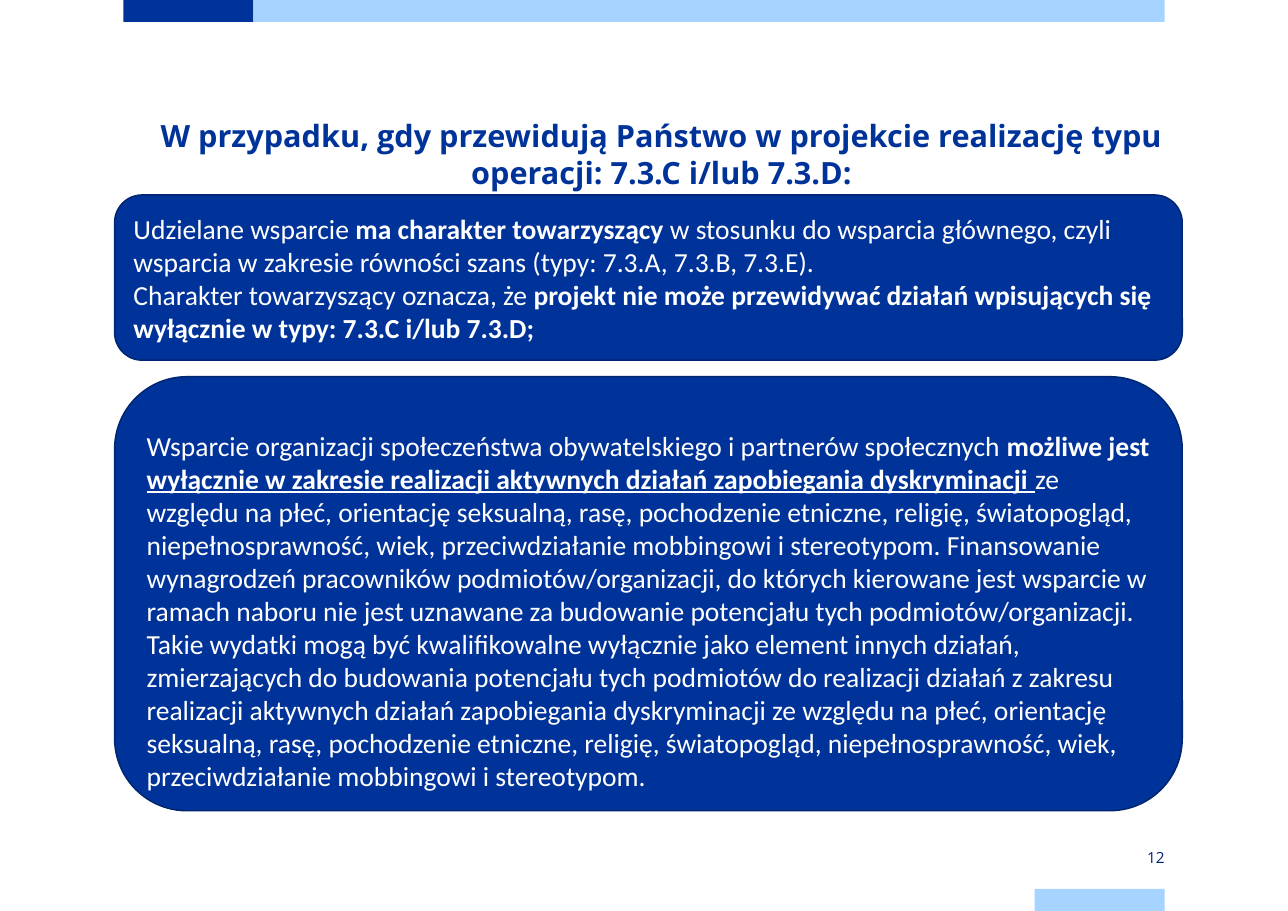
from pptx import Presentation
from pptx import util as u
from pptx.dml.color import RGBColor
from pptx.enum import shapes, text

PX = 9144  # 100 px to the inch
NAVY = RGBColor(0x00, 0x33, 0x99)
DARK_NAVY = RGBColor(0x00, 0x26, 0x71)
NUMBER_BLUE = RGBColor(0x00, 0x20, 0x73)
SKY = RGBColor(0xA6, 0xD3, 0xFF)
WHITE = RGBColor(0xFF, 0xFF, 0xFF)

PLAIN, BOLD, UNDERLINED = "plain", "bold", "underlined"

TITLE = "W przypadku, gdy przewidują Państwo w projekcie realizację typu operacji: 7.3.C i/lub 7.3.D:"
ACCOMPANYING_SUPPORT = [
    [("Udzielane wsparcie ", PLAIN),
     ("ma charakter towarzyszący ", BOLD),
     ("w stosunku do wsparcia głównego, czyli wsparcia w zakresie równości szans "
      "(typy: 7.3.A, 7.3.B, 7.3.E).", PLAIN)],
    [("Charakter towarzyszący oznacza, że ", PLAIN),
     ("projekt nie może przewidywać działań wpisujących się wyłącznie w typy: "
      "7.3.C i/lub 7.3.D;", BOLD)],
]
ORGANISATION_SUPPORT = [
    [("Wsparcie organizacji społeczeństwa obywatelskiego i partnerów społecznych ", PLAIN),
     ("możliwe jest ", BOLD),
     ("wyłącznie w zakresie realizacji aktywnych działań zapobiegania dyskryminacji ", UNDERLINED),
     ("ze względu na płeć, orientację seksualną, rasę, pochodzenie etniczne, religię, "
      "światopogląd, niepełnosprawność, wiek, przeciwdziałanie mobbingowi i stereotypom. "
      "Finansowanie wynagrodzeń pracowników podmiotów/organizacji, do których kierowane "
      "jest wsparcie w ramach naboru nie jest uznawane za budowanie potencjału tych "
      "podmiotów/organizacji. Takie wydatki mogą być kwalifikowalne wyłącznie jako element "
      "innych działań, zmierzających do budowania potencjału tych podmiotów do realizacji "
      "działań z zakresu realizacji aktywnych działań zapobiegania dyskryminacji ze względu "
      "na płeć, orientację seksualną, rasę, pochodzenie etniczne, religię, światopogląd, "
      "niepełnosprawność, wiek, przeciwdziałanie mobbingowi i stereotypom.", PLAIN)],
]


def emu(box):
    return [length * PX for length in box]


def set_font(font, name, size, color, bold=False):
    font.name, font.size, font.bold = name, u.Pt(size), bold
    font.color.rgb = color


def clear_margins(frame):
    frame.margin_left = frame.margin_top = frame.margin_right = frame.margin_bottom = 0


def add_filled(page, kind, box, color):
    shape = page.shapes.add_shape(kind, *emu(box))
    shape.shadow.inherit = False
    shape.fill.solid()
    shape.fill.fore_color.rgb = color
    shape.line.fill.background()
    return shape


def add_bars(page, box):
    """Draw the page's top band and bottom-right tab inside the box."""
    left, top, width, height = box
    tab, thick = 118, 20
    for bar, color in (
        ((left, top, tab, thick), NAVY),
        ((left + tab, top, width - tab, thick), SKY),
        ((left + width - tab, top + height - thick, tab, thick), SKY),
    ):
        add_filled(page, shapes.MSO_SHAPE.RECTANGLE, bar, color)


def add_title(page, box):
    title = page.shapes.title
    title.left, title.top, title.width, title.height = emu(box)
    frame = title.text_frame
    clear_margins(frame)
    frame.word_wrap = True
    frame.auto_size = text.MSO_AUTO_SIZE.NONE
    frame.vertical_anchor = text.MSO_ANCHOR.TOP
    para = frame.paragraphs[0]
    para.text = TITLE
    para.alignment = text.PP_ALIGN.CENTER
    para.line_spacing = u.Pt(24)
    para.space_before = u.Pt(0)
    set_font(para.font, "Open Sans", 20, NAVY, bold=True)


def add_panel(page, box, paragraphs, top_margin=5):
    panel = add_filled(page, shapes.MSO_SHAPE.ROUNDED_RECTANGLE, box, NAVY)
    panel.line.color.rgb = DARK_NAVY
    panel.line.width = u.Pt(1)
    frame = panel.text_frame
    frame.word_wrap = True
    frame.margin_top = top_margin * PX
    frame.vertical_anchor = text.MSO_ANCHOR.MIDDLE
    for index, spans in enumerate(paragraphs):
        para = frame.add_paragraph() if index else frame.paragraphs[0]
        para.alignment = text.PP_ALIGN.LEFT
        set_font(para.font, "Calibri", 18, WHITE)
        for words, style in spans:
            span = para.add_run()
            span.text = words
            set_font(span.font, "Calibri", 18, WHITE, bold=style != PLAIN)
            span.font.underline = style == UNDERLINED


def add_page_number(page, box, number):
    frame = page.shapes.add_textbox(*emu(box)).text_frame
    clear_margins(frame)
    frame.word_wrap = True
    frame.vertical_anchor = text.MSO_ANCHOR.MIDDLE
    para = frame.paragraphs[0]
    para.text = str(number)
    para.alignment = text.PP_ALIGN.RIGHT
    set_font(para.font, "Open Sans", 10, NUMBER_BLUE)


def main():
    deck = Presentation()
    deck.slide_width, deck.slide_height = 1169 * PX, 827 * PX
    title_only = deck.slide_layouts[5]
    page = deck.slides.add_slide(title_only)
    add_bars(page, (112, 0, 945, 827))
    add_title(page, (128, 106, 945, 67))
    add_panel(page, (104, 177, 969, 150), ACCOMPANYING_SUPPORT)
    add_panel(page, (104, 342, 969, 394), ORGANISATION_SUPPORT, top_margin=35)
    add_page_number(page, (939, 768, 118, 20), 12)
    deck.save("out.pptx")


if __name__ == "__main__":
    main()
